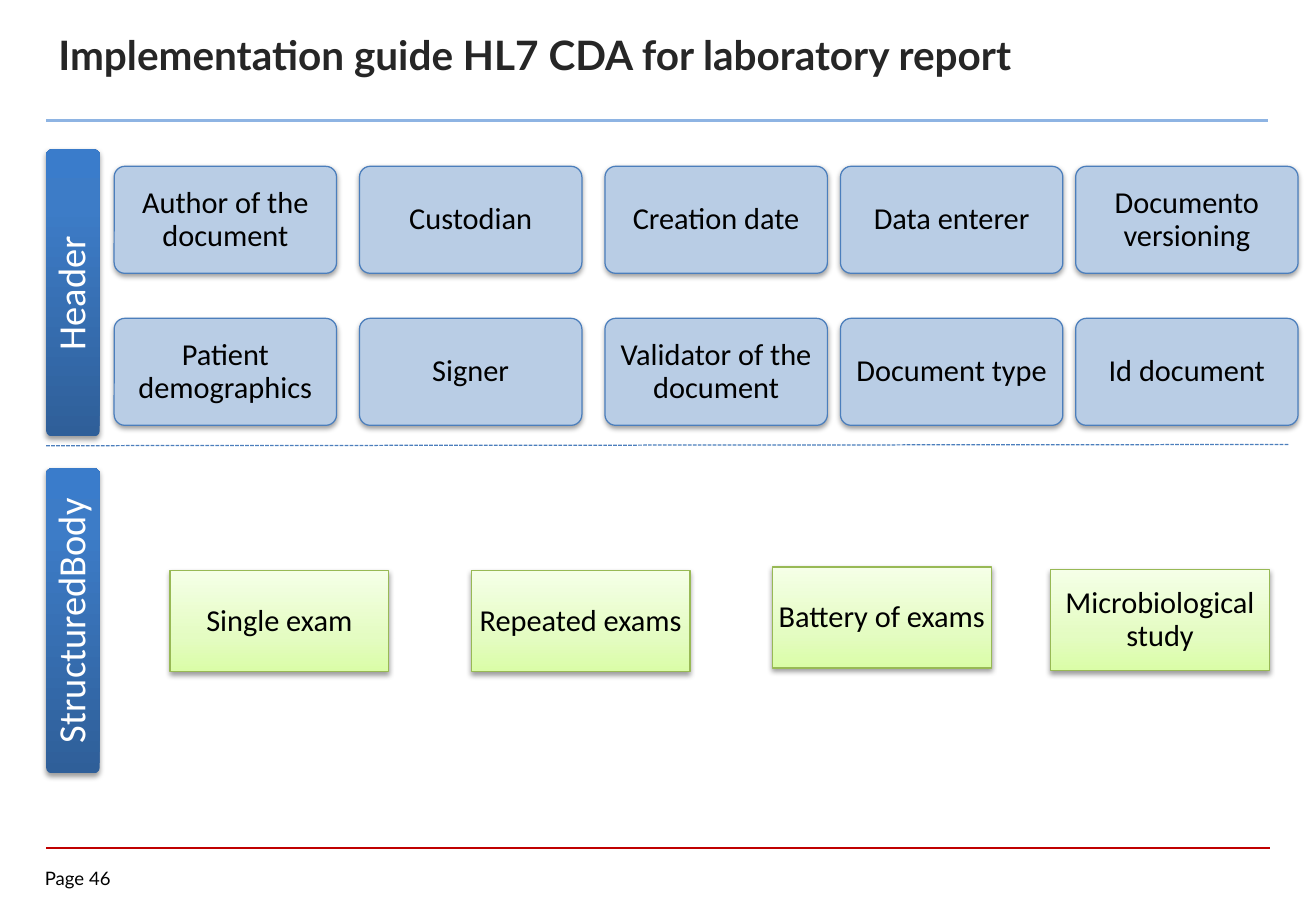
import pptx
import pptx.util
import pptx.dml.color
import pptx.enum.dml
import pptx.enum.shapes
import pptx.enum.text
import pptx.oxml
import pptx.oxml.ns

Pt = pptx.util.Pt
RGB = pptx.dml.color.RGBColor.from_string
SHAPES = pptx.enum.shapes.MSO_SHAPE
ALIGN = pptx.enum.text.PP_ALIGN
MIDDLE = pptx.enum.text.MSO_ANCHOR.MIDDLE

THEME = {
    "title": "262626", "text": "000000", "band_text": "FFFFFF",
    "title_rule": "8EB4E3", "footer_rule": "C00000",
    "field_fill": "B9CDE5", "field_line": "4B7EBC", "exam_line": "98B955",
    "band_stops": [(0, "2F5F99"), (80, "3D7CC7"), (100, "3A7CCB")],
    "exam_stops": [(0, "DAFDA7"), (35, "E4FCC2"), (100, "F5FFE7")],
    "title_font": "Lato", "body_font": "Calibri",
    "title_size": 24, "band_size": 22.8, "box_size": 18, "page_size": 11,
}


def add_box(kind, left, top, width, height, label, fill, line, size, color, inset):
    """Draw a labelled box; fill is one colour or a list of gradient stops."""
    box = slide.shapes.add_shape(kind, Pt(left), Pt(top), Pt(width), Pt(height))
    if kind == SHAPES.ROUNDED_RECTANGLE:
        box.adjustments[0] = 0.1
    properties = box._element.spPr
    ns = pptx.oxml.ns.nsdecls("a")
    if isinstance(fill, str):
        box.fill.solid()
        box.fill.fore_color.rgb = RGB(fill)
    else:
        stops = "".join(f'<a:gs pos="{pos * 1000}"><a:srgbClr val="{rgb}"/></a:gs>'
                        for pos, rgb in fill)
        properties.append(pptx.oxml.parse_xml(
            f'<a:gradFill {ns} rotWithShape="0"><a:gsLst>{stops}</a:gsLst>'
            '<a:lin ang="16200000" scaled="0"/></a:gradFill>'))
    if line:
        box.line.color.rgb = RGB(line)
        box.line.width = Pt(0.75)
    else:
        box.line.fill.background()
    box.shadow.inherit = False
    properties.find(pptx.oxml.ns.qn("a:effectLst")).append(pptx.oxml.parse_xml(
        f'<a:outerShdw {ns} blurRad="40000" dist="20000" dir="5400000" rotWithShape="0">'
        '<a:srgbClr val="000000"><a:alpha val="38000"/></a:srgbClr></a:outerShdw>'))
    frame = box.text_frame
    frame.word_wrap = True
    frame.vertical_anchor = MIDDLE
    frame.margin_left = frame.margin_right = Pt(inset)
    frame.margin_top = frame.margin_bottom = Pt(inset / 2)
    paragraph = frame.paragraphs[0]
    paragraph.text = label
    paragraph.alignment = ALIGN.CENTER
    paragraph.line_spacing = 0.9
    set_font(paragraph, THEME["body_font"], size, color)
    return box


def set_font(paragraph, name, size, color):
    paragraph.font.name = name
    paragraph.font.size = Pt(size)
    paragraph.font.color.rgb = RGB(color)


deck = pptx.Presentation()
deck.slide_width, deck.slide_height = Pt(780), Pt(540)
slide = deck.slides.add_slide(deck.slide_layouts[5])

# Title
title = slide.shapes.title
title.left, title.top, title.width, title.height = Pt(27.4), Pt(6.5), Pt(714), Pt(51)
title.text_frame.vertical_anchor = MIDDLE
heading = title.text_frame.paragraphs[0]
heading.text = "Implementation guide HL7 CDA for laboratory report"
heading.alignment = ALIGN.LEFT
set_font(heading, THEME["title_font"], THEME["title_size"], THEME["title"])
heading.font.bold = True

# Rules: under the title, between the sections, above the page number
rules = [
    (71.3, 71.3, 751.7, THEME["title_rule"], 1.5, None),
    (264.2, 263.5, 764, THEME["field_line"], 0.75, pptx.enum.dml.MSO_LINE.SQUARE_DOT),
    (502.6, 502.6, 753, THEME["footer_rule"], 1, None),
]
for start_y, end_y, end_x, color, weight, dash in rules:
    rule = slide.shapes.add_connector(pptx.enum.shapes.MSO_CONNECTOR.STRAIGHT,
                                      Pt(27.4), Pt(start_y), Pt(end_x), Pt(end_y))
    rule.line.color.rgb = RGB(color)
    rule.line.width = Pt(weight)
    if dash:
        rule.line.dash_style = dash
    rule._element.spPr.append(pptx.oxml.parse_xml(
        f'<a:effectLst {pptx.oxml.ns.nsdecls("a")}/>'))

# Section bands, turned to read upwards
band_left, band_width = 27.4, 31.7
for label, top, length in [("Header", 88.6, 170), ("StructuredBody", 277.6, 180.7)]:
    band = add_box(SHAPES.ROUNDED_RECTANGLE,
                   band_left + (band_width - length) / 2, top + (length - band_width) / 2,
                   length, band_width, label, THEME["band_stops"], None,
                   THEME["band_size"], THEME["band_text"], 4.3)
    band.rotation = 270

# Header fields
field_lefts = [67.7, 213.1, 358.6, 498.2, 637.6]
field_rows = [
    (98.6, ["Author of the document", "Custodian", "Creation date",
            "Data enterer", "Documento versioning"]),
    (188.7, ["Patient demographics", "Signer", "Validator of the document",
             "Document type", "Id document"]),
]
for top, labels in field_rows:
    for left, label in zip(field_lefts, labels):
        add_box(SHAPES.ROUNDED_RECTANGLE, left, top, 131.8, 63.4, label,
                THEME["field_fill"], THEME["field_line"],
                THEME["box_size"], THEME["text"], 7.2)

# Exam types in the structured body
exams = [("Single exam", 100.8, 338.4), ("Repeated exams", 279.4, 338.4),
         ("Battery of exams", 457.9, 336.2), ("Microbiological study", 622.8, 337.7)]
for label, left, top in exams:
    add_box(SHAPES.RECTANGLE, left, top, 129.6, 59.8, label,
            THEME["exam_stops"], THEME["exam_line"],
            THEME["box_size"], THEME["text"], 1.4)

# Page number
page = slide.shapes.add_textbox(Pt(26.6), Pt(514), Pt(52.6), Pt(15.8)).text_frame
page.word_wrap = True
page.margin_left = page.margin_right = page.margin_top = page.margin_bottom = 0
page.paragraphs[0].text = "Page 46"
set_font(page.paragraphs[0], THEME["title_font"], THEME["page_size"], THEME["text"])

deck.save("out.pptx")
